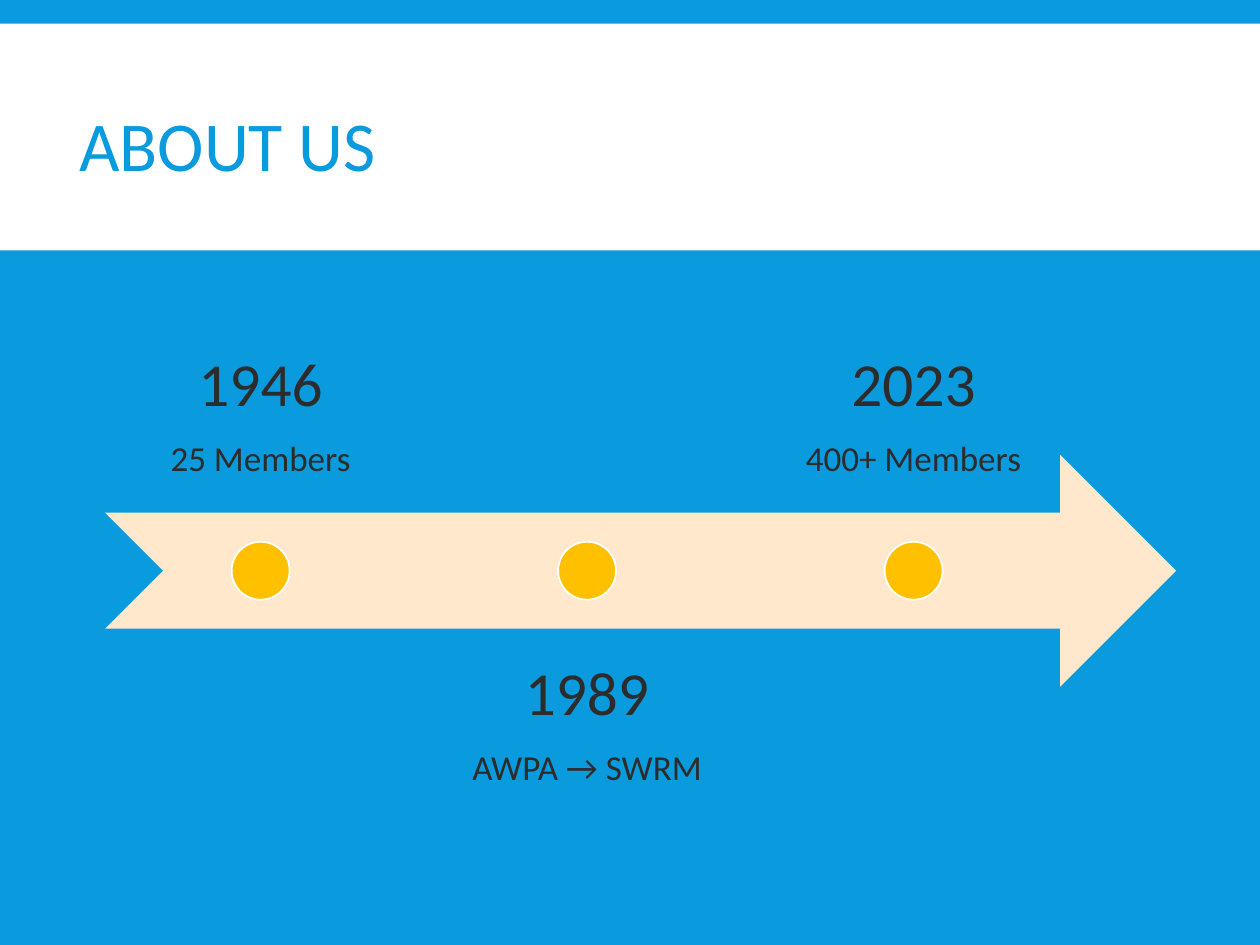
import pptx
import pptx.dml.color
import pptx.enum.shapes
import pptx.enum.text
import pptx.util
from collections import namedtuple

RGBColor = pptx.dml.color.RGBColor
SHAPE = pptx.enum.shapes.MSO_SHAPE
ANCHOR = pptx.enum.text.MSO_ANCHOR
ALIGN = pptx.enum.text.PP_ALIGN
Inches, Pt = pptx.util.Inches, pptx.util.Pt

BLUE = RGBColor(0x09, 0x9B, 0xDD)
WHITE = RGBColor(0xFF, 0xFF, 0xFF)
CREAM = RGBColor(0xFF, 0xE8, 0xCC)
AMBER = RGBColor(0xFF, 0xC0, 0x00)
CHARCOAL = RGBColor(0x2C, 0x2C, 0x2C)
FONT = "Calibri"

Box = namedtuple("Box", "left top width height")  # inches

MILESTONES = [
    ("1946", "25 Members"),
    ("1989", "AWPA → SWRM"),
    ("2023", "400+ Members"),
]


def part_of(box, left, top, width, height):
    """Return the part of a box given as shares of its sides."""
    return Box(box.left + left * box.width, box.top + top * box.height,
               width * box.width, height * box.height)


def add_plain_shape(page, kind, box, fill, line=None):
    shape = page.shapes.add_shape(kind, *map(Inches, box))
    shape.shadow.inherit = False
    shape.fill.solid()
    shape.fill.fore_color.rgb = fill
    if line is None:
        shape.line.fill.background()
    else:
        shape.line.color.rgb = line
        shape.line.width = Pt(1)
    return shape


def style_paragraph(para, size, color, spacing, align):
    para.font.name = FONT
    para.font.size = Pt(size)
    para.font.color.rgb = color
    para.line_spacing = spacing
    para.alignment = align


def add_header(page, band, title_box, text):
    add_plain_shape(page, SHAPE.RECTANGLE, band, WHITE)
    title = page.shapes.title
    title.left, title.top, title.width, title.height = map(Inches, title_box)
    # Bring the title in front of the band
    page.shapes.element.append(title.element)
    frame = title.text_frame
    frame.text = text
    frame.word_wrap = True
    frame.vertical_anchor = ANCHOR.MIDDLE
    style_paragraph(frame.paragraphs[0], 40, BLUE, 0.85, ALIGN.LEFT)


def add_milestone_label(page, box, year, note, anchor):
    frame = page.shapes.add_textbox(*map(Inches, box)).text_frame
    frame.word_wrap = True
    frame.vertical_anchor = anchor
    frame.margin_left = frame.margin_right = Inches(0.27)
    frame.margin_top = frame.margin_bottom = Inches(0.27)
    frame.text = f"{year}\n{note}"
    for para, size in zip(frame.paragraphs, (35, 20)):
        style_paragraph(para, size, CHARCOAL, 0.9, ALIGN.CENTER)
        para.space_after = Pt(0.35 * size)


def add_timeline(page, box, milestones):
    add_plain_shape(page, SHAPE.NOTCHED_RIGHT_ARROW,
                    part_of(box, 0, 0.3, 1, 0.4), CREAM)

    # Columns fill nine tenths of the arrow, with gaps of 5% of a column
    count = len(milestones)
    column = 0.9 / (count + 0.05 * (count - 1))
    dot = 0.1 * box.height
    for index, (year, note) in enumerate(milestones):
        above = index % 2 == 0
        label = part_of(box, index * column * 1.05, 0 if above else 0.6,
                        column, 0.4)
        add_milestone_label(page, label, year, note,
                            ANCHOR.BOTTOM if above else ANCHOR.TOP)
        marker = Box(label.left + (label.width - dot) / 2,
                     box.top + (box.height - dot) / 2, dot, dot)
        add_plain_shape(page, SHAPE.OVAL, marker, AMBER, WHITE)


def main():
    deck = pptx.Presentation()
    slide_box = Box(0, 0, 10, 7.5)
    deck.slide_width = Inches(slide_box.width)
    deck.slide_height = Inches(slide_box.height)
    page = deck.slides.add_slide(deck.slide_layouts.get_by_name("Title Only"))
    page.background.fill.solid()
    page.background.fill.fore_color.rgb = BLUE

    add_header(page, part_of(slide_box, 0, 0.025, 1, 0.24),
               Box(0.53, 0.37, 8.03, 1.65), "ABOUT US")
    add_timeline(page, Box(0.835, 2.23, 8.5, 4.6), MILESTONES)
    deck.save("out.pptx")


if __name__ == "__main__":
    main()
